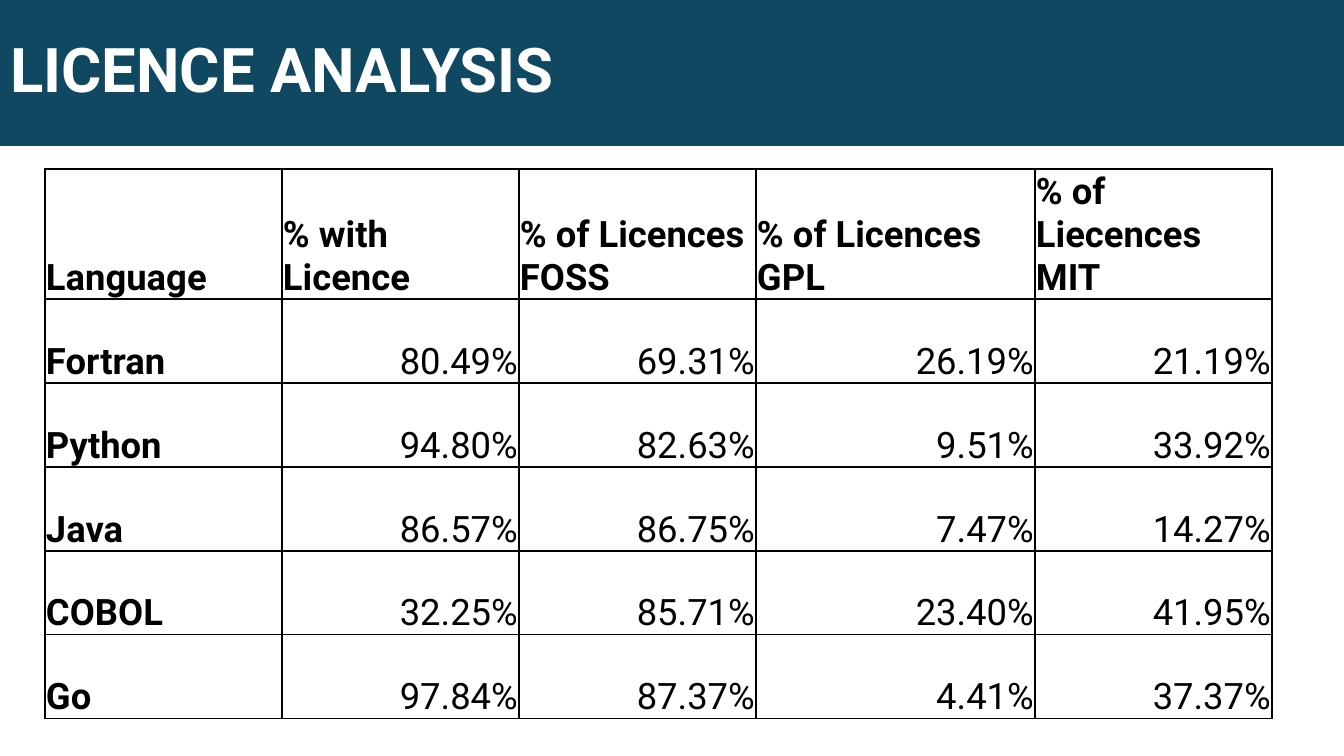
"""Build a slide with a title band and a table of licence shares by language."""
from dataclasses import dataclass

from lxml.etree import SubElement
from pptx import Presentation
from pptx.dml.color import RGBColor as RGB
from pptx.enum.text import MSO_ANCHOR as ANCHOR, MSO_AUTO_SIZE as AUTO, PP_ALIGN as ALIGN
from pptx.oxml.ns import qn
from pptx.util import Pt


@dataclass(frozen=True)
class Theme:
    """Colours, font and type sizes of the slide."""
    font: str = "Roboto"
    band: str = "104862"
    title: str = "FFFFFF"
    ink: str = "000000"
    title_pt: int = 44
    cell_pt: int = 26
    border_pt: int = 1


T = Theme()
COLS = [237, 237, 237, 279, 237]
ROWS = [130] + [84] * 5
DATA = [
    ["Language", "% with Licence", "% of Licences FOSS", "% of Licences GPL", "% of Liecences MIT"],
    ["Fortran", "80.49%", "69.31%", "26.19%", "21.19%"],
    ["Python", "94.80%", "82.63%", "9.51%", "33.92%"],
    ["Java", "86.57%", "86.75%", "7.47%", "14.27%"],
    ["COBOL", "32.25%", "85.71%", "23.40%", "41.95%"],
    ["Go", "97.84%", "87.37%", "4.41%", "37.37%"],
]


def px(n):
    """Turn whole pixels into EMU."""
    return round(n * 914400 / 100.8)


def write(tf, text, align, size, color, bold):
    """Put one formatted run into a text frame."""
    p = tf.paragraphs[0]
    p.alignment = align
    r = p.add_run()
    r.text = text
    for name, value in {"name": T.font, "size": Pt(size), "bold": bold}.items():
        setattr(r.font, name, value)
    r.font.color.rgb = RGB.from_string(color)
    return p


prs = Presentation()
prs.slide_width, prs.slide_height = px(1344), px(756)
s = prs.slides.add_slide(prs.slide_layouts[5])

sp = s.shapes.title
for name, value in {"left": 0, "top": 0, "width": px(1344), "height": px(146)}.items():
    setattr(sp, name, value)
sp.fill.solid()
sp.fill.fore_color.rgb = RGB.from_string(T.band)
tf = sp.text_frame
for name, value in {"auto_size": AUTO.NONE, "word_wrap": True,
                    "vertical_anchor": ANCHOR.MIDDLE}.items():
    setattr(tf, name, value)
p = write(tf, "LICENCE ANALYSIS", ALIGN.LEFT, T.title_pt, T.title, True)
p.line_spacing = 0.9

frame = s.shapes.add_table(len(ROWS), len(COLS), px(45), px(169), px(sum(COLS)), px(sum(ROWS)))
table = frame.table
table.first_row = table.horz_banding = False
for col, width in zip(table.columns, COLS):
    col.width = px(width)
for row, height in zip(table.rows, ROWS):
    row.height = px(height)

cell_format = {"margin_left": px(1), "margin_right": px(1), "margin_top": px(1),
               "margin_bottom": 0, "vertical_anchor": ANCHOR.BOTTOM}
for i, values in enumerate(DATA):
    for j, text in enumerate(values):
        cell = table.cell(i, j)
        for name, value in cell_format.items():
            setattr(cell, name, value)
        label = i == 0 or j == 0
        write(cell.text_frame, text, ALIGN.LEFT if label else ALIGN.RIGHT,
              T.cell_pt, T.ink, label)
        tc_pr = cell._tc.get_or_add_tcPr()
        for side in ("lnL", "lnR", "lnT", "lnB"):
            ln = SubElement(tc_pr, qn(f"a:{side}"), w=str(Pt(T.border_pt)))
            fill = SubElement(ln, qn("a:solidFill"))
            SubElement(fill, qn("a:srgbClr"), val=T.ink)
        cell.fill.background()

prs.save("out.pptx")
